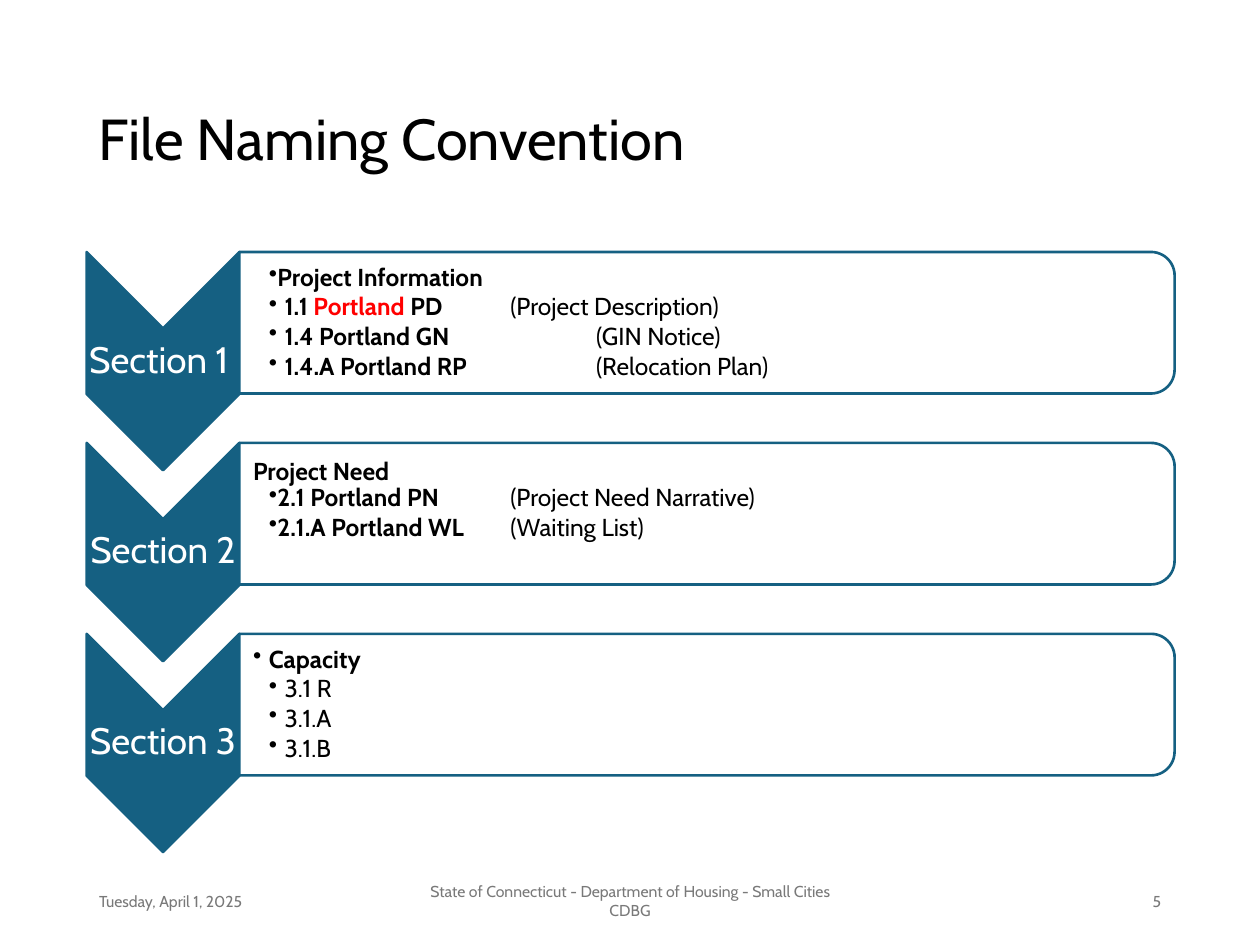
from pptx import Presentation
from pptx.dml.color import RGBColor
from pptx.enum.shapes import MSO_SHAPE
from pptx.enum.text import MSO_ANCHOR, PP_ALIGN
from pptx.oxml.ns import qn
from pptx.util import Pt
from lxml.etree import SubElement

FONT, TEAL, WHITE, BLACK, RED, GRAY = "Cabin", "156082", "FFFFFF", "000000", "FF0000", "797979"
TITLE = "File Naming Convention"
BOLD, PLAIN, MARK = (True, BLACK), (False, BLACK), (True, RED)
FLUSH, HEAD, SUB, NONE = (1, 9, 0), (1, 9, -9), (2, 18, -9), None
FLUSH_SUB = (2, 9, 0)

SECTIONS = [
    ("Section 1 ", 0, [
        (FLUSH, [("Project Information", BOLD)]),
        (SUB, [("1.1 ", BOLD), ("Portland", MARK), (" PD \t", BOLD), ("(Project Description)", PLAIN)]),
        (SUB, [("1.4 Portland GN \t\t", BOLD), ("(GIN Notice)", PLAIN)]),
        (SUB, [("1.4.A Portland RP \t\t", BOLD), ("(Relocation Plan)", PLAIN)]),
    ]),
    ("Section 2 ", 17, [
        (NONE, [("Project Need", BOLD)]),
        (FLUSH_SUB, [("2.1 Portland PN \t", BOLD), ("(Project Need Narrative)", PLAIN)]),
        (FLUSH_SUB, [("2.1.A Portland WL \t", BOLD), ("(Waiting List)", PLAIN)]),
    ]),
    ("Section 3 ", 0, [
        (HEAD, [("Capacity", BOLD)]),
        (SUB, [("3.1 R", PLAIN)]),
        (SUB, [("3.1.A", PLAIN)]),
        (SUB, [("3.1.B", PLAIN)]),
    ]),
]
FOOTER = [
    ("Tuesday, April 1, 2025", 49.5, 162, PP_ALIGN.LEFT),
    ("State of Connecticut - Department of Housing - Small Cities CDBG", 238.5, 243, PP_ALIGN.CENTER),
    ("5", 508.5, 162, PP_ALIGN.RIGHT),
]
LEFT, TOP, PITCH = 49.5, 144, 109.1
CHEVRON_W, CHEVRON_H = 87.3, 124.7
PANEL_W, PANEL_H = 534.4, 80.9
LABEL_H, BODY_W, BODY_H = 37.4, 530, 73


def rgb(value):
    return RGBColor.from_string(value)


def add_run(p, text, size, color, bold=False):
    r = p.add_run()
    r.text = text
    r.font.name, r.font.size, r.font.bold = FONT, Pt(size), bold
    r.font.color.rgb = rgb(color)


def add_box(slide, x, y, w, h, insets=(7.2, 3.6, 7.2, 3.6)):
    tf = slide.shapes.add_textbox(Pt(x), Pt(y), Pt(w), Pt(h)).text_frame
    tf.word_wrap, tf.vertical_anchor = True, MSO_ANCHOR.MIDDLE
    tf.margin_left, tf.margin_top, tf.margin_right, tf.margin_bottom = map(Pt, insets)
    return tf


def add_line(slide, text, box, size, color, align=PP_ALIGN.LEFT, spacing=None, **options):
    p = add_box(slide, *box, **options).paragraphs[0]
    p.alignment, p.line_spacing = align, spacing
    add_run(p, text, size, color)


def add_turned(slide, kind, x, y, w, h, fill):
    sp = slide.shapes.add_shape(kind, Pt(x + (w - h) / 2), Pt(y + (h - w) / 2), Pt(h), Pt(w))
    sp.rotation = 90
    sp.shadow.inherit = False
    sp.fill.solid()
    sp.fill.fore_color.rgb = rgb(fill)
    sp.line.color.rgb = rgb(TEAL)
    sp.line.width = Pt(1.5)


def add_bullet(p, level, margin, indent):
    p.level, p.line_spacing, p.space_after = level, 0.9, Pt(1.8)
    pPr = p._p.get_or_add_pPr()
    pPr.set("marL", str(Pt(margin)))
    pPr.set("indent", str(Pt(indent)))
    SubElement(pPr, qn("a:buChar")).set("char", "•")


def add_section(slide, y, label, pad, lines):
    add_turned(slide, MSO_SHAPE.CHEVRON, LEFT, y, CHEVRON_W, CHEVRON_H, TEAL)
    add_line(slide, label, (LEFT, y + (CHEVRON_H - LABEL_H) / 2, CHEVRON_W, LABEL_H), 21, WHITE,
             PP_ALIGN.CENTER, 0.9, insets=(0.7,) * 4)
    x = LEFT + CHEVRON_W
    add_turned(slide, MSO_SHAPE.ROUND_2_SAME_RECTANGLE, x, y, PANEL_W, PANEL_H, WHITE)
    tf = add_box(slide, x, y + (PANEL_H - BODY_H) / 2, BODY_W, BODY_H, (7.8, 0.7, 0.7, 0.7 + pad))
    for i, (bullet, runs) in enumerate(lines):
        p = tf.add_paragraph() if i else tf.paragraphs[0]
        p._p.get_or_add_pPr().set("defTabSz", str(Pt(49)))
        if bullet:
            add_bullet(p, *bullet)
        for text, (bold, color) in runs:
            add_run(p, text, 14, color, bold)


def main():
    """Build the file naming slide and save it."""
    prs = Presentation()
    prs.slide_width, prs.slide_height = Pt(720), Pt(540)
    slide = prs.slides.add_slide(prs.slide_layouts[6])
    add_line(slide, TITLE, (49.5, 28.75, 621, 104.4), 33, BLACK, spacing=0.9)
    for i, section in enumerate(SECTIONS):
        add_section(slide, TOP + i * PITCH, *section)
    for text, x, w, align in FOOTER:
        add_line(slide, text, (x, 500.5, w, 28.75), 9, GRAY, align)
    prs.save("out.pptx")


if __name__ == "__main__":
    main()
